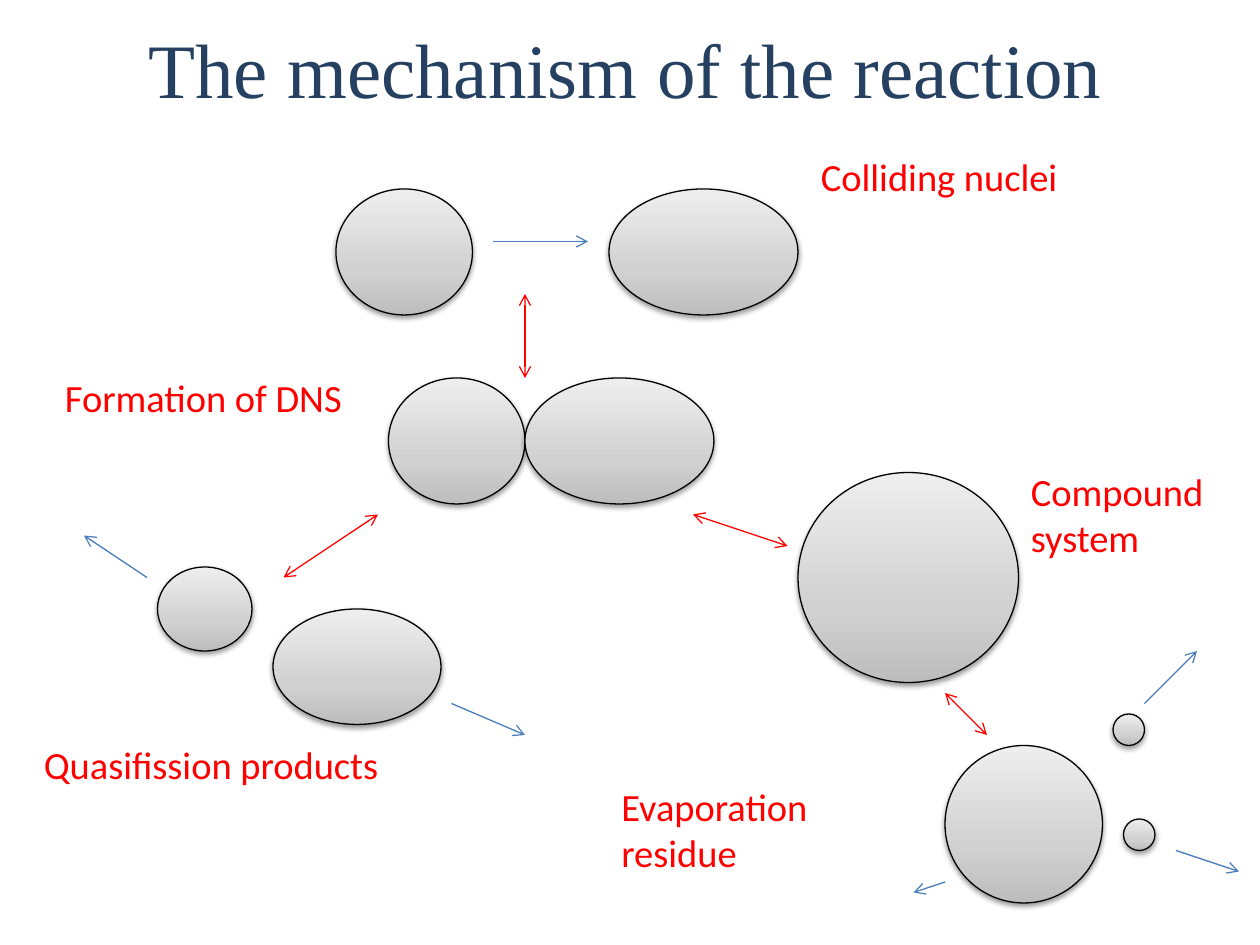
import lxml.etree
import pptx
import pptx.dml.color
import pptx.enum.shapes
import pptx.enum.text
import pptx.oxml.ns
import pptx.util

Pt = pptx.util.Pt
RGB = pptx.dml.color.RGBColor
qn = pptx.oxml.ns.qn

BLACK = RGB(0x00, 0x00, 0x00)
RED = RGB(0xFF, 0x00, 0x00)
BLUE = RGB(0x4B, 0x7E, 0xBC)
NAVY = RGB(0x25, 0x40, 0x61)
GREYS = [
    (0, RGB(0xBD, 0xBD, 0xBD)),
    (35, RGB(0xD1, 0xD1, 0xD1)),
    (100, RGB(0xEE, 0xEE, 0xEE)),
]


def add_node(root, tag, **attrs):
    """Append a DrawingML child element and return it."""
    return lxml.etree.SubElement(root, qn(tag), {k: str(v) for k, v in attrs.items()})


def add_run(para, text, font, size, color):
    run = para.add_run()
    run.text = text
    run.font.name = font
    run.font.size = Pt(size)
    run.font.color.rgb = color


deck = pptx.Presentation()
deck.slide_width = Pt(720)
deck.slide_height = Pt(540)
slide = deck.slides.add_slide(deck.slide_layouts[5])
shapes = slide.shapes

# Title
title = shapes.title
title.left, title.top, title.width, title.height = Pt(13), Pt(6), Pt(689), Pt(65.5)
title.text_frame.vertical_anchor = pptx.enum.text.MSO_ANCHOR.MIDDLE
para = title.text_frame.paragraphs[0]
para.alignment = pptx.enum.text.PP_ALIGN.CENTER
add_run(para, "The mechanism of the reaction", "Times New Roman", 44, NAVY)

# Nuclei: left, top, width, height
nuclei = [
    (192, 108, 78, 72),    # colliding pair
    (348, 108, 108, 72),
    (222, 216, 78, 72),    # touching pair
    (300, 216, 108, 72),
    (90, 324, 54, 48),     # quasifission pair
    (156, 348, 96, 66),
    (456, 270, 126, 120),  # compound system
    (540, 426, 90, 90),    # residue and emitted particles
    (636, 408, 18, 18),
    (642, 468, 18, 18),
]
for box in nuclei:
    ball = shapes.add_shape(pptx.enum.shapes.MSO_SHAPE.OVAL, *map(Pt, box))
    ball.fill.gradient()
    ball.fill.gradient_angle = 90
    props = ball.element.spPr
    stops = props.find(".//" + qn("a:gsLst"))
    stops.clear()
    for pos, grey in GREYS:
        stop = add_node(stops, "a:gs", pos=pos * 1000)
        add_node(stop, "a:srgbClr", val=grey)
    ball.line.color.rgb = BLACK
    ball.line.width = Pt(0.75)
    ball.shadow.inherit = False
    shade = add_node(props.find(qn("a:effectLst")), "a:outerShdw",
                     blurRad=Pt(3.1), dist=Pt(1.6), dir=90 * 60000, rotWithShape=0)
    tint = add_node(shade, "a:srgbClr", val=BLACK)
    add_node(tint, "a:alpha", val=38000)

# Arrows: start and end points; red ones point both ways
steps = [
    (300, 168, 300, 216),
    (162, 330, 216, 294),
    (396, 294, 450, 312),
    (540, 396, 564, 420),
]
moves = [
    (282, 138, 336, 138),
    (84, 330, 48, 306),
    (258, 402, 300, 420),
    (654, 402, 684, 372),
    (672, 486, 708, 498),
    (540, 504, 522, 510),
]
for color, ends, group in [(RED, ["a:headEnd", "a:tailEnd"], steps),
                           (BLUE, ["a:tailEnd"], moves)]:
    for points in group:
        arrow = shapes.add_connector(pptx.enum.shapes.MSO_CONNECTOR.STRAIGHT,
                                     *map(Pt, points))
        arrow.line.color.rgb = color
        arrow.line.width = Pt(0.75)
        for end in ends:
            add_node(arrow.line._get_or_add_ln(), end, type="arrow")
        add_node(arrow.element.spPr, "a:effectLst")

# Labels: text, left, top, width, height
labels = [
    ("Colliding nuclei", 462, 84, 240, 34),
    ("Formation of DNS", 30, 210, 192, 34),
    ("Quasifission products", 18, 420, 234, 34),
    ("Evaporation residue", 348, 444, 180, 60.5),
    ("Compound system", 582, 264, 120, 60.5),
]
for text, *box in labels:
    frame = shapes.add_textbox(*map(Pt, box)).text_frame
    frame.word_wrap = True
    frame.auto_size = pptx.enum.text.MSO_AUTO_SIZE.SHAPE_TO_FIT_TEXT
    add_run(frame.paragraphs[0], text, "Calibri", 22, RED)

deck.save("out.pptx")
